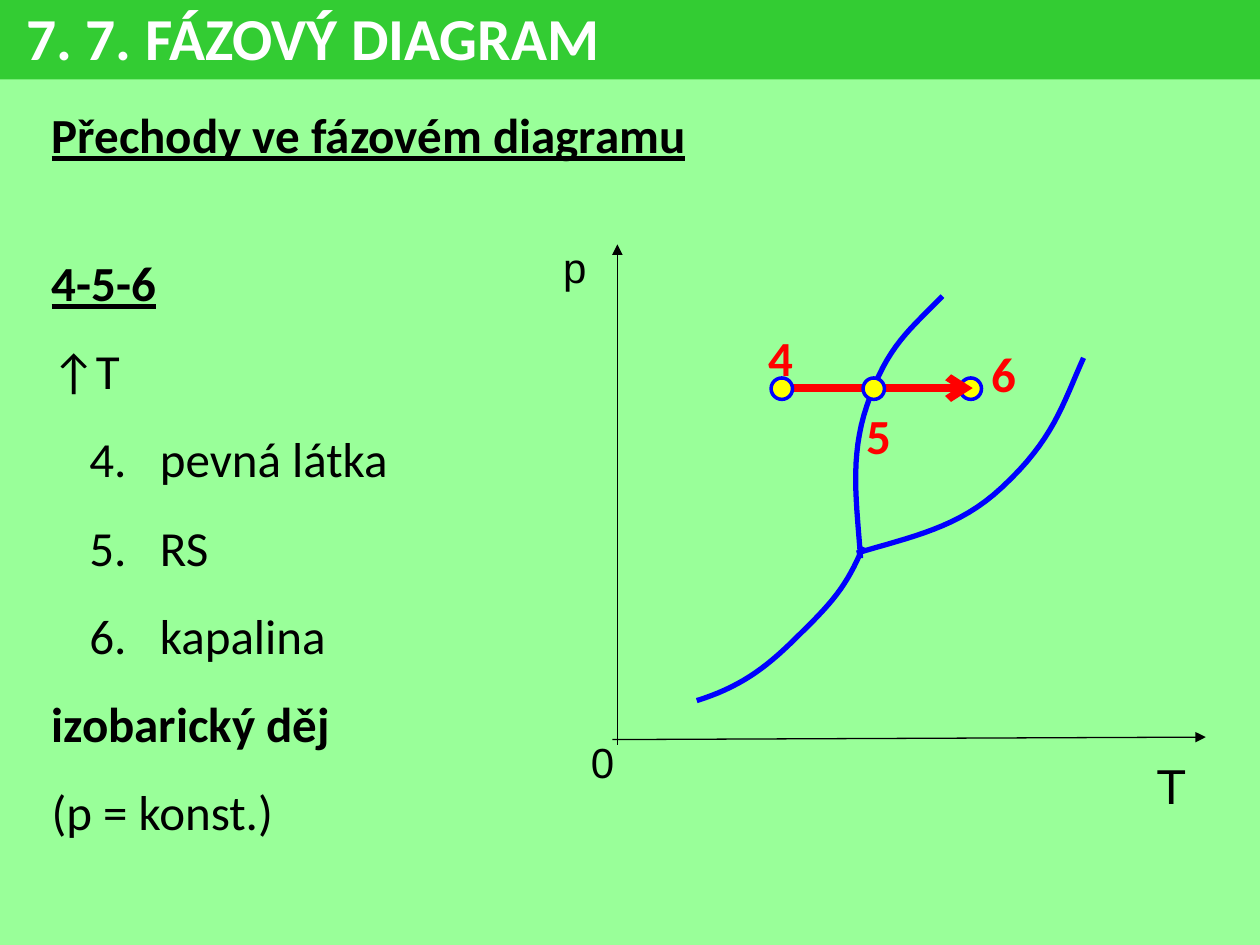
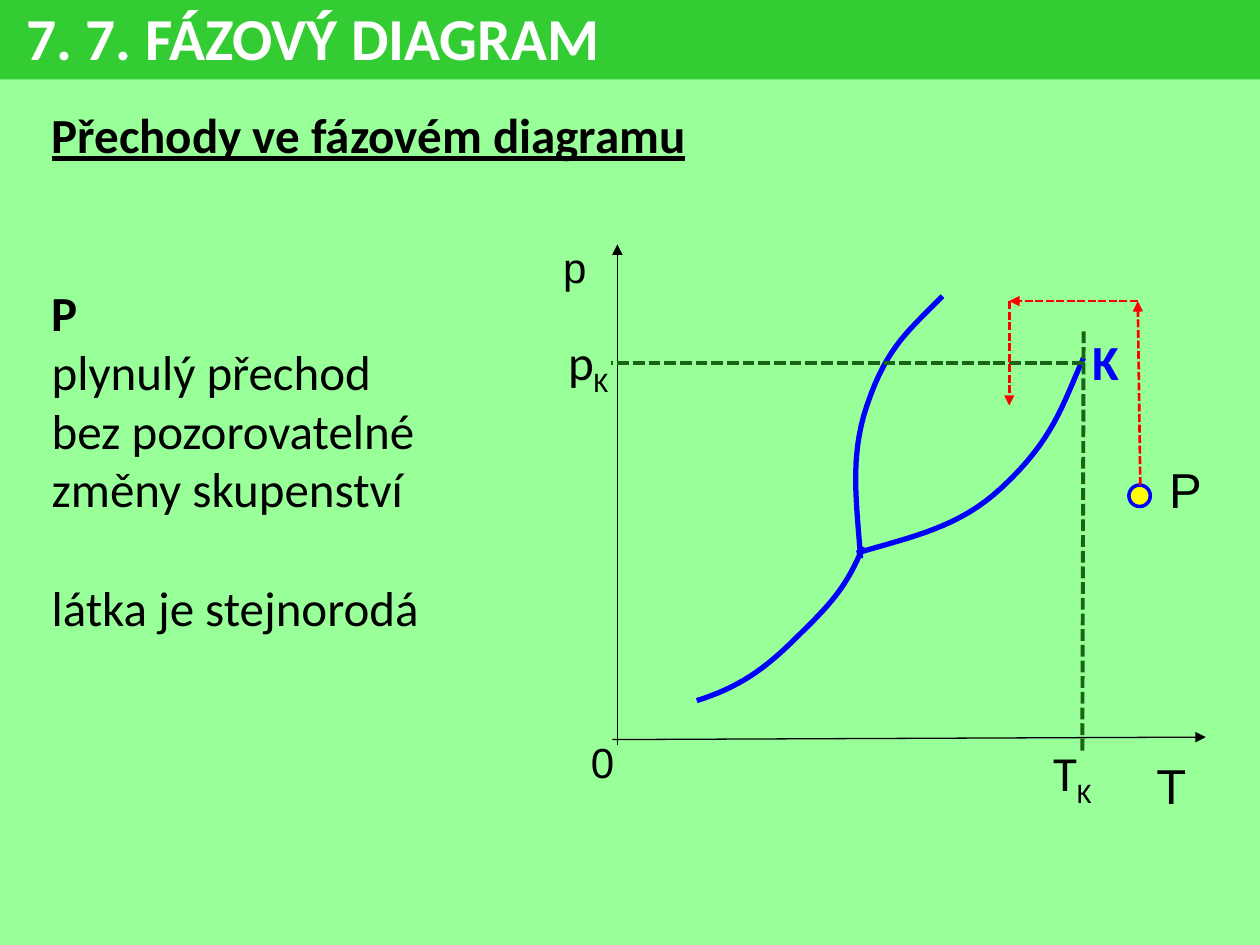
from pptx import Presentation
from pptx import util as u
from pptx.dml.color import RGBColor
from pptx.enum import dml, shapes, text
from pptx.oxml.ns import qn
from lxml import etree

BACKGROUND, BAND, WHITE, BLACK = "99FF99", "33CC33", "FFFFFF", "000000"
BLUE, RED, YELLOW, DARK_GREEN = "0000FF", "FF0000", "FFFF00", "196419"
BLANK_LINE = 34  # height in points of one line of 28 pt text

# Each curve: start point, then cubic segments (two controls and an end)
PHASE_CURVES = [
    [(6.8, 4.39), (7.23, 4.26), (7.61, 4.19), (7.95, 3.87),
     (8.36, 3.49), (8.43, 3.22), (8.6, 2.84)],
    [(6.83, 4.43), (6.8, 4), (6.74, 3.63), (6.88, 3.22),
     (7.04, 2.74), (7.23, 2.61), (7.48, 2.35)],
    [(5.53, 5.56), (5.85, 5.46), (6.06, 5.32), (6.31, 5.07),
     (6.61, 4.78), (6.72, 4.65), (6.85, 4.34)],
]


def colour(value):
    return RGBColor.from_string(value)


def add_xml(parent, tag, **attributes):
    return etree.SubElement(parent, qn(tag), attributes)


def bezier(start, control_1, control_2, end, steps=16):
    """Points along a cubic curve, without its start."""
    for step in range(1, steps + 1):
        t = step / steps
        weights = ((1 - t) ** 3, 3 * t * (1 - t) ** 2, 3 * t * t * (1 - t), t ** 3)
        yield tuple(sum(w * point[axis] for w, point in
                        zip(weights, (start, control_1, control_2, end)))
                    for axis in (0, 1))


class DiagramDeck:
    def __init__(self):
        self.deck = Presentation()
        self.deck.slide_width, self.deck.slide_height = u.Inches(10), u.Inches(7.5)
        fill = self.deck.slide_master.background.fill
        fill.solid()
        fill.fore_color.rgb = colour(BACKGROUND)
        self.page = None

    def place(self, box, left, top, width, height):
        box.left, box.top = u.Inches(left), u.Inches(top)
        box.width, box.height = u.Inches(width), u.Inches(height)

    def format(self, span, size, ink, font="Calibri", bold=False, underline=False):
        span.font.name, span.font.size = font, u.Pt(size)
        span.font.bold, span.font.underline = bold, underline
        span.font.color.rgb = colour(ink)

    def outline(self, shape, ink, width):
        shape.line.color.rgb = colour(ink)
        shape.line.width = u.Pt(width)

    def new_page(self, title):
        self.page = self.deck.slides.add_slide(self.deck.slide_layouts[1])
        band = self.page.shapes.title
        self.place(band, 0, -0.04, 10, 0.67)
        band.fill.solid()
        band.fill.fore_color.rgb = colour(BAND)
        frame = band.text_frame
        frame.text = title
        frame.auto_size = text.MSO_AUTO_SIZE.NONE
        frame.vertical_anchor = text.MSO_ANCHOR.MIDDLE
        frame.margin_left = u.Inches(0.21)
        para = frame.paragraphs[0]
        para.alignment = text.PP_ALIGN.LEFT
        self.format(para.runs[0], 34, WHITE, bold=True)

    def body(self, height, lines, spacing=1.0):
        """Fill the body; lines hold words, style letters (b, u, n) and space before."""
        box = self.page.placeholders[1]
        self.place(box, 0.31, 0.78, 9.69, height)
        frame = box.text_frame
        frame.text = "\n".join(words for words, _, _ in lines)
        frame.auto_size = text.MSO_AUTO_SIZE.NONE
        for index, (para, (_, style, before)) in enumerate(zip(frame.paragraphs, lines)):
            para.line_spacing = spacing if index else 1.0
            para.space_before = u.Pt(before)
            self.format(para.runs[0], 28, BLACK, bold="b" in style, underline="u" in style)
            settings = para._p.get_or_add_pPr()
            numbered = "n" in style
            settings.set("marL", str(u.Inches(0.86 if numbered else 0)))
            settings.set("indent", str(u.Inches(-0.56 if numbered else 0)))
            if numbered:
                add_xml(settings, "a:buFont", typeface="+mj-lt")
                add_xml(settings, "a:buAutoNum", type="arabicPeriod", startAt="4")
            else:
                add_xml(settings, "a:buNone")

    def label(self, words, left, top, width, subscript="", size=28, ink=BLACK,
              font="Calibri", bold=False):
        box = self.page.shapes.add_textbox(0, 0, 0, 0)
        self.place(box, left, top, width, 0.5 if size == 24 else 0.57)
        box.text_frame.word_wrap = False
        para = box.text_frame.paragraphs[0]
        para.text = words
        if subscript:
            span = para.add_run()
            span.text = subscript
            span._r.get_or_add_rPr().set("baseline", "-25000")
        for span in para.runs:
            self.format(span, size, ink, font, bold)

    def line(self, start, end, ink, width, head="triangle", dashed=False):
        link = self.page.shapes.add_connector(
            shapes.MSO_CONNECTOR.STRAIGHT, *map(u.Inches, (*start, *end)))
        self.outline(link, ink, width)
        if dashed:
            link.line.dash_style = dml.MSO_LINE.SQUARE_DOT
        if head:
            add_xml(link.line._get_or_add_ln(), "a:tailEnd", type=head)
        add_xml(link._element.spPr, "a:effectLst")

    def state_point(self, left, top):
        dot = self.page.shapes.add_shape(shapes.MSO_SHAPE.OVAL, 0, 0, 0, 0)
        self.place(dot, left, top, 0.17, 0.17)
        dot.shadow.inherit = False
        dot.fill.solid()
        dot.fill.fore_color.rgb = colour(YELLOW)
        self.outline(dot, BLUE, 2)

    def curve(self, points):
        track = [points[0]]
        for first in range(0, len(points) - 1, 3):
            track += bezier(*points[first:first + 4])
        track = [(u.Inches(x), u.Inches(y)) for x, y in track]
        builder = self.page.shapes.build_freeform(*track[0])
        builder.add_line_segments(track[1:], close=False)
        shape = builder.convert_to_shape()
        shape.shadow.inherit = False
        shape.fill.background()
        self.outline(shape, BLUE, 3)

    def phase_diagram(self):
        self.label("p", 4.37, 1.87, 0.39, size=24, font="Arial")
        self.line((4.9, 5.91), (4.9, 1.94), BLACK, 0.75)
        self.line((4.86, 5.87), (9.57, 5.85), BLACK, 0.75)
        self.label("0", 4.59, 5.8, 0.39, size=24, font="Arial")
        for points in PHASE_CURVES:
            self.curve(points)
        self.label("T", 9.08, 5.95, 0.44, font="Arial")


def isobaric_page(show):
    show.new_page("7. 7. FÁZOVÝ DIAGRAM")
    show.body(5.99, [
        ("Přechody ve fázovém diagramu", "bu", 0),
        ("4-5-6", "bu", BLANK_LINE),
        ("↑T", "", 0),
        ("pevná látka", "n", 0),
        ("RS", "n", 0),
        ("kapalina", "n", 0),
        ("izobarický děj", "b", 0),
        ("(p = konst.)", "", 0),
    ], spacing=1.5)
    show.state_point(7.62, 3)
    show.line((6.24, 3.08), (7.72, 3.08), RED, 4.5, head="arrow")
    show.phase_diagram()
    for left in (6.12, 6.85):
        show.state_point(left, 3)
    for number, left, top in (("6", 7.77, 2.68), ("5", 6.78, 3.17), ("4", 6, 2.55)):
        show.label(number, left, top, 0.39, ink=RED, bold=True)


def continuous_page(show):
    show.new_page("7. 7. FÁZOVÝ DIAGRAM")
    show.body(4.34, [
        ("Přechody ve fázovém diagramu", "bu", 0),
        ("P", "b", 2 * BLANK_LINE),
        ("plynulý přechod", "", 0),
        ("bez pozorovatelné", "", 0),
        ("změny skupenství", "", 0),
        ("látka je stejnorodá", "", BLANK_LINE),
    ])
    show.phase_diagram()
    show.state_point(8.96, 3.85)
    show.label("P", 9.18, 3.6, 0.46, font="Arial")
    show.label("K", 8.57, 2.58, 0.42, ink=BLUE, bold=True)
    show.line((8.6, 2.63), (8.59, 5.98), DARK_GREEN, 2.25, head=None, dashed=True)
    show.label("T", 8.26, 5.84, 0.53, subscript="K")
    show.line((8.6, 2.88), (4.85, 2.88), DARK_GREEN, 2.25, head=None, dashed=True)
    show.label("p", 4.41, 2.58, 0.55, subscript="K")
    route = [(9.05, 3.85), (9.03, 2.39), (8.01, 2.39), (8.01, 3.22)]
    for start, end in zip(route, route[1:]):
        show.line(start, end, RED, 1.5, dashed=True)


def main():
    show = DiagramDeck()
    isobaric_page(show)
    continuous_page(show)
    show.deck.save("out.pptx")


if __name__ == "__main__":
    main()
